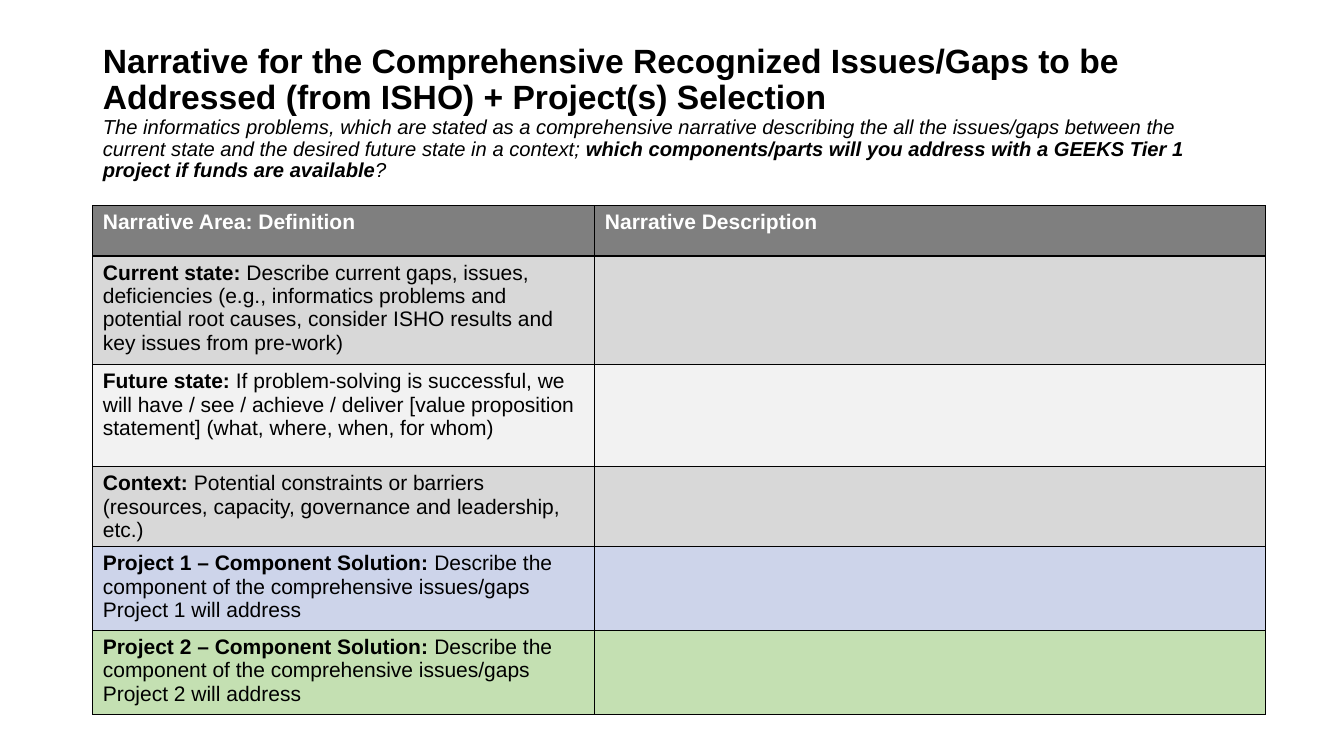
from dataclasses import dataclass

from lxml.etree import SubElement
from pptx import Presentation
from pptx.dml.color import RGBColor
from pptx.enum.text import MSO_ANCHOR, PP_ALIGN
from pptx.oxml.ns import qn
from pptx.util import Inches, Pt


@dataclass(frozen=True)
class Theme:
    font: str = "Arial"
    black: str = "000000"
    white: str = "FFFFFF"
    header: str = "7F7F7F"
    grey: str = "D8D8D8"
    pale: str = "F2F2F2"
    blue: str = "CDD4EA"
    green: str = "C4E0B2"
    title_size: float = 24
    prompt_size: float = 14.4
    table_size: float = 15
    border: float = 1


theme = Theme()


def add_text(paragraph, text, size, color=theme.black, bold=False, italic=False):
    run = paragraph.add_run()
    run.text = text
    run.font.name = theme.font
    run.font.size = Pt(size)
    run.font.bold = bold
    run.font.italic = italic
    run.font.color.rgb = RGBColor.from_string(color)


def add_borders(cell):
    properties = cell._tc.get_or_add_tcPr()
    for side in ("a:lnL", "a:lnR", "a:lnT", "a:lnB"):
        line = SubElement(properties, qn(side), w=str(Pt(theme.border)))
        fill = SubElement(line, qn("a:solidFill"))
        SubElement(fill, qn("a:srgbClr"), val=theme.black)


prs = Presentation()
prs.slide_width, prs.slide_height = Inches(13.33), Inches(7.5)
slide = prs.slides.add_slide(prs.slide_layouts[5])

# Title with the guiding question
title = slide.shapes.title
title.left, title.top = Inches(0.92), Inches(0.4)
title.width, title.height = Inches(11.5), Inches(1.45)
title.text_frame.word_wrap = True
title.text_frame.vertical_anchor = MSO_ANCHOR.MIDDLE
heading = title.text_frame.paragraphs[0]
heading.alignment = PP_ALIGN.LEFT
heading.line_spacing = 0.9
add_text(heading, "Narrative for the Comprehensive Recognized Issues/Gaps to be "
         "Addressed (from ISHO) + Project(s) Selection", theme.title_size, bold=True)
heading.add_line_break()
prompt = [
    ("The informatics problems, which are stated as a comprehensive narrative "
     "describing the all the issues/gaps between the current state and the "
     "desired future state in a context; ", False),
    ("which components/parts will you address with a GEEKS Tier 1 project "
     "if funds are available", True),
    ("?", False),
]
for text, bold in prompt:
    add_text(heading, text, theme.prompt_size, bold=bold, italic=True)

# Narrative areas: label, definition, fill, row height
areas = [
    ("Current state: ", "Describe current gaps, issues, deficiencies (e.g., "
     "informatics problems and potential root causes, consider ISHO results and "
     "key issues from pre-work)", theme.grey, 1.08),
    ("Future state: ", "If problem-solving is successful, we will have / see / "
     "achieve / deliver [value proposition statement] (what, where, when, for whom)",
     theme.pale, 1.01),
    ("Context: ", "Potential constraints or barriers (resources, capacity, "
     "governance and leadership, etc.)", theme.grey, 0.72),
]
for number, fill in enumerate((theme.blue, theme.green), start=1):
    areas.append((f"Project {number} – Component Solution: ",
                  "Describe the component of the comprehensive issues/gaps "
                  f"Project {number} will address", fill, 0.83))

# Narrative table
narrative = slide.shapes.add_table(len(areas) + 1, 2, Inches(0.92), Inches(2.04),
                                   Inches(11.63), Inches(4.97)).table
narrative.columns[0].width = Inches(4.98)
narrative.columns[1].width = Inches(6.65)

narrative.rows[0].height = Inches(0.5)
for cell, text in zip(narrative.rows[0].cells,
                      ("Narrative Area: Definition", "Narrative Description")):
    add_text(cell.text_frame.paragraphs[0], text, theme.table_size, theme.white, bold=True)

for row, (label, definition, fill, height) in zip(list(narrative.rows)[1:], areas):
    row.height = Inches(height)
    area = row.cells[0].text_frame.paragraphs[0]
    add_text(area, label, theme.table_size, bold=True)
    add_text(area, definition, theme.table_size)

# Borders and row fills
row_fills = [theme.header] + [area[2] for area in areas]
for row, fill in zip(narrative.rows, row_fills):
    for cell in row.cells:
        add_borders(cell)
        cell.fill.solid()
        cell.fill.fore_color.rgb = RGBColor.from_string(fill)

prs.save("out.pptx")
